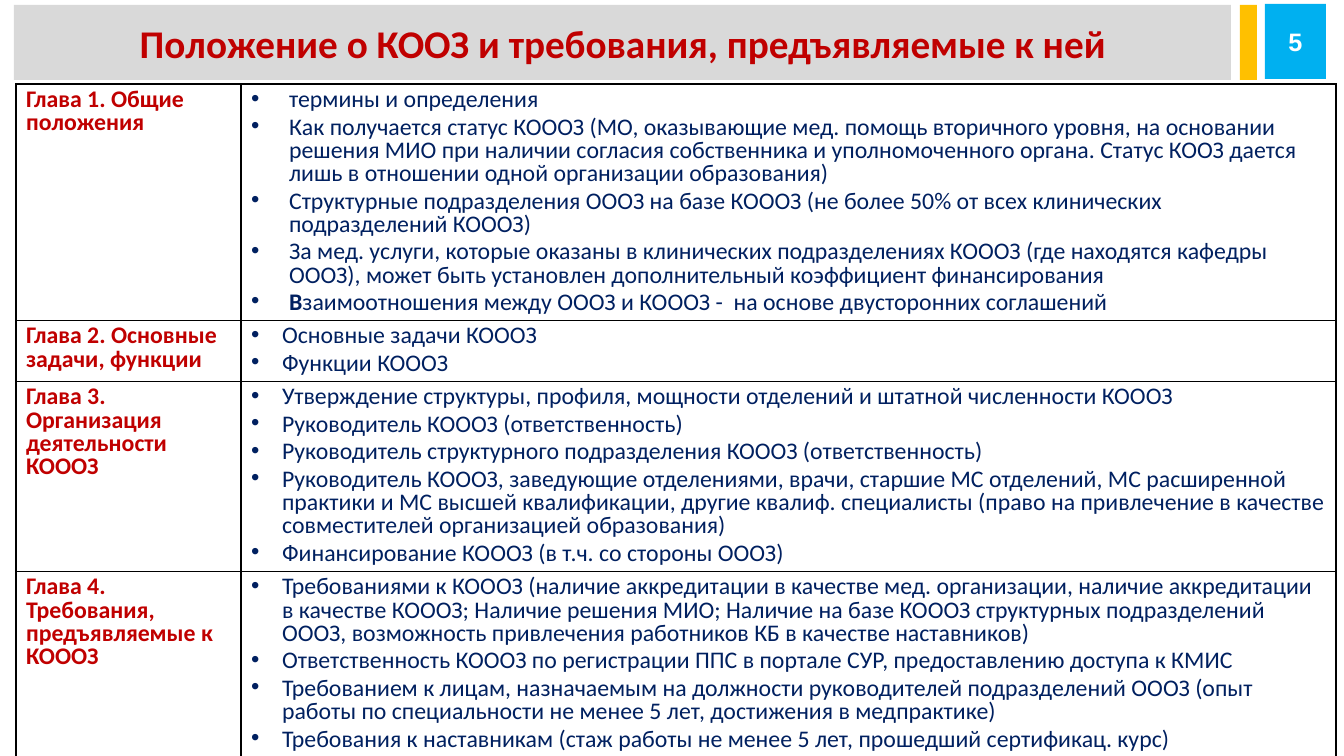
"""Build the slide with the table of chapters of the regulation."""
from lxml import etree
from pptx import Presentation
from pptx.dml.color import RGBColor
from pptx.enum.shapes import MSO_SHAPE
from pptx.enum.text import MSO_ANCHOR, PP_ALIGN
from pptx.oxml.ns import qn
from pptx.util import Pt

TITLE = "Положение о КООЗ и требования, предъявляемые к ней"
PAGE = "5"
CHAPTERS = [
    ("Глава 1. Общие положения", 236, 38, [
        ("", "термины и определения"),
        ("", "Как получается статус КОООЗ (МО, оказывающие мед. помощь вторичного уровня, на основании "
             "решения МИО при наличии согласия собственника и уполномоченного органа. Статус КООЗ дается "
             "лишь в отношении одной организации образования)"),
        ("", "Структурные подразделения ОООЗ на базе КОООЗ (не более 50% от всех клинических "
             "подразделений КОООЗ)"),
        ("", "За мед. услуги, которые оказаны в клинических подразделениях КОООЗ (где находятся кафедры "
             "ОООЗ), может быть установлен дополнительный коэффициент финансирования"),
        ("В", "заимоотношения между ОООЗ и КОООЗ -  на основе двусторонних соглашений"),
    ]),
    ("Глава 2. Основные задачи, функции", 61, 31, [
        ("", "Основные задачи КОООЗ"),
        ("", "Функции КОООЗ"),
    ]),
    ("Глава 3. Организация деятельности КОООЗ", 190, 31, [
        ("", "Утверждение структуры, профиля, мощности отделений и штатной численности КОООЗ"),
        ("", "Руководитель КОООЗ (ответственность)"),
        ("", "Руководитель структурного подразделения КОООЗ (ответственность)"),
        ("", "Руководитель КОООЗ, заведующие отделениями, врачи, старшие МС отделений, МС расширенной "
             "практики и МС высшей квалификации, другие квалиф. специалисты (право на привлечение в "
             "качестве совместителей организацией образования)"),
        ("", "Финансирование КОООЗ (в т.ч. со стороны ОООЗ)"),
    ]),
    ("Глава 4. Требования, предъявляемые к КОООЗ", 177, 31, [
        ("", "Требованиями к КОООЗ (наличие аккредитации в качестве мед. организации, наличие аккредитации "
             "в качестве КОООЗ; Наличие решения МИО; Наличие на базе КОООЗ структурных подразделений "
             "ОООЗ, возможность привлечения работников КБ в качестве наставников)"),
        ("", "Ответственность КОООЗ по регистрации ППС в портале СУР, предоставлению доступа к КМИС"),
        ("", "Требованием к лицам, назначаемым на должности руководителей подразделений ОООЗ (опыт "
             "работы по специальности не менее 5 лет, достижения в медпрактике)"),
        ("", "Требования к наставникам (стаж работы не менее 5 лет, прошедший сертификац. курс)"),
    ]),
]

RED = RGBColor(0xC0, 0x00, 0x00)
NAVY = RGBColor(0x00, 0x20, 0x60)
GREY = RGBColor(0xD9, 0xD9, 0xD9)
GOLD = RGBColor(0xFF, 0xC0, 0x00)
SKY = RGBColor(0x00, 0xB0, 0xF0)
WHITE = RGBColor(0xFF, 0xFF, 0xFF)
BLACK = RGBColor(0x00, 0x00, 0x00)
RECT = MSO_SHAPE.RECTANGLE
MIDDLE = MSO_ANCHOR.MIDDLE
CENTER = PP_ALIGN.CENTER

SCALE = 914400 / 100.8
WIDTHS = (225, 1095)
HEAD = {"name": "Calibri", "size": Pt(17), "bold": True}
BODY = {"name": "Calibri", "size": Pt(17), "bold": False}
BANNER = {"name": "Calibri", "size": Pt(28), "bold": True}
NUMBER = {"name": "Arial", "size": Pt(18), "bold": True}
SPACING = {"line_spacing": 0.8, "space_after": Pt(3)}
BARS = [
    ((14, 5, 1217, 75), GREY, TITLE, BANNER, RED),
    ((1240, 5, 17, 75), GOLD, "", NUMBER, WHITE),
    ((1265, 4, 61, 75), SKY, PAGE, NUMBER, WHITE),
]


def px(count):
    return round(count * SCALE)


def apply(target, values):
    for name, value in values.items():
        setattr(target, name, value)


def write(para, text, style, color):
    run = para.add_run()
    run.text = text
    apply(run.font, style)
    run.font.color.rgb = color


def add_bar(slide, box, fill, text, style, color):
    bar = slide.shapes.add_shape(RECT, *map(px, box))
    bar.shadow.inherit = False
    bar.fill.solid()
    bar.fill.fore_color.rgb = fill
    bar.line.fill.background()
    if text:
        bar.text_frame.vertical_anchor = MIDDLE
        para = bar.text_frame.paragraphs[0]
        para.alignment = CENTER
        write(para, text, style, color)


def add_bullet(para, indent):
    props = para._p.get_or_add_pPr()
    props.set("marL", str(px(indent)))
    props.set("indent", str(-px(indent)))
    etree.SubElement(props, qn("a:buFont")).set("typeface", "Arial")
    etree.SubElement(props, qn("a:buChar")).set("char", "•")


def add_border(cell):
    props = cell._tc.get_or_add_tcPr()
    for place, side in enumerate(("lnL", "lnR", "lnT", "lnB")):
        line = etree.Element(qn("a:" + side), w=str(Pt(1)))
        fill = etree.SubElement(line, qn("a:solidFill"))
        etree.SubElement(fill, qn("a:srgbClr")).set("val", str(BLACK))
        props.insert(place, line)


def add_grid(slide):
    size = (sum(WIDTHS), sum(row[1] for row in CHAPTERS))
    frame = slide.shapes.add_table(len(CHAPTERS), 2, px(16), px(84), *map(px, size))
    table = frame.table
    apply(table, {"first_row": False, "horz_banding": False})
    for column, width in zip(table.columns, WIDTHS):
        column.width = px(width)
    for row, (head, height, indent, items) in zip(table.rows, CHAPTERS):
        row.height = px(height)
        for cell in row.cells:
            cell.fill.background()
            add_border(cell)
        left, right = row.cells
        para = left.text_frame.paragraphs[0]
        apply(para, SPACING)
        write(para, head, HEAD, RED)
        for index, (lead, text) in enumerate(items):
            frame = right.text_frame
            para = frame.add_paragraph() if index else frame.paragraphs[0]
            apply(para, SPACING)
            add_bullet(para, indent)
            if lead:
                write(para, lead, HEAD, NAVY)
            write(para, text, BODY, NAVY)


def main():
    deck = Presentation()
    apply(deck, {"slide_width": px(1344), "slide_height": px(756)})
    slide = deck.slides.add_slide(deck.slide_layouts[6])
    for bar in BARS:
        add_bar(slide, *bar)
    add_grid(slide)
    deck.save("out.pptx")


if __name__ == "__main__":
    main()
